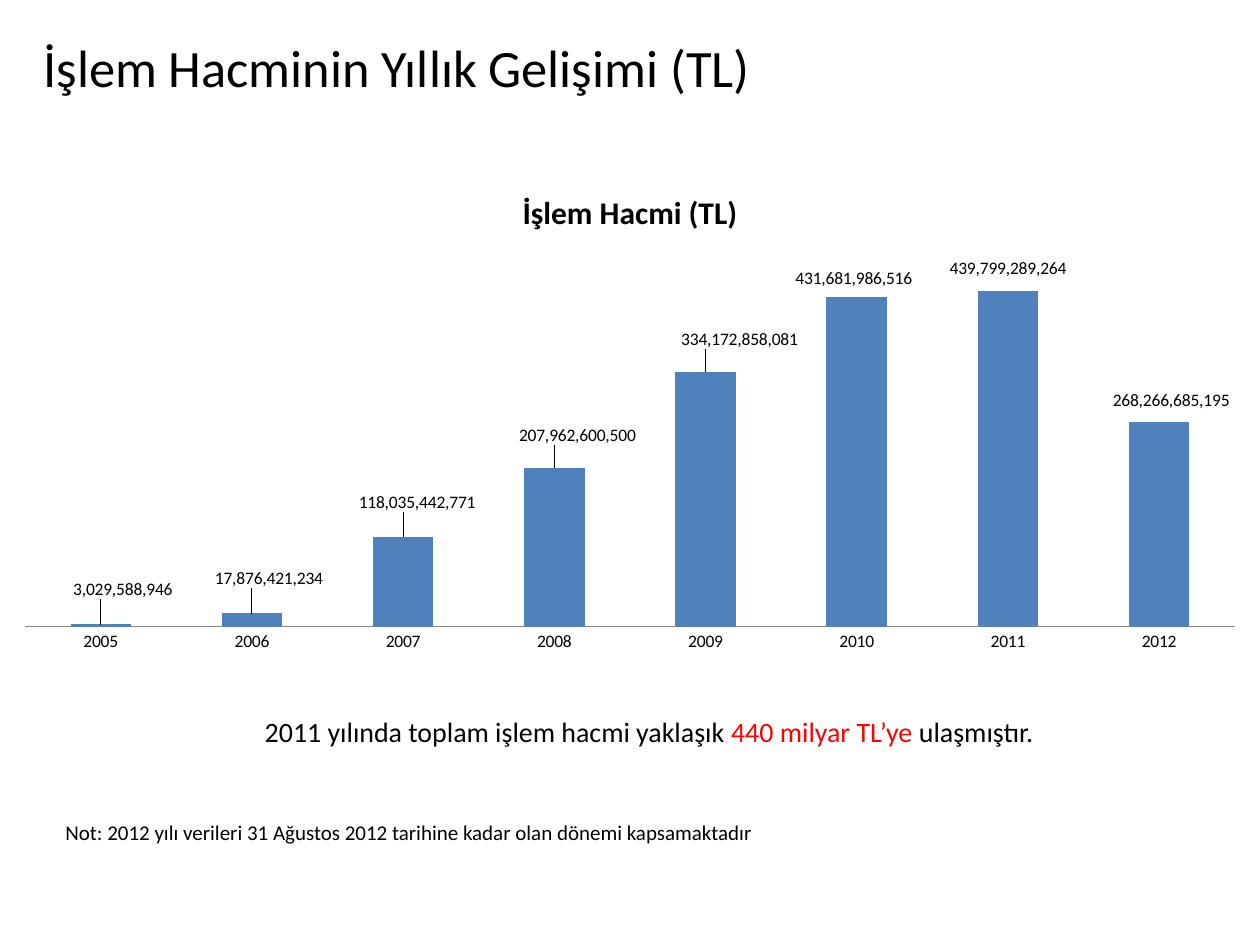
from lxml import etree
from pptx import Presentation, util as u
from pptx.chart.data import CategoryChartData
from pptx.dml.color import RGBColor
from pptx.enum import chart as ch, text
from pptx.oxml.ns import qn

BLACK = RGBColor(0, 0, 0)
RED = RGBColor(0xFF, 0, 0)
BLUE = RGBColor(0x4F, 0x81, 0xBD)
GRAY = RGBColor(0x86, 0x86, 0x86)

VOLUMES = {
    "2005": 3029588946,
    "2006": 17876421234,
    "2007": 118035442771,
    "2008": 207962600500,
    "2009": 334172858081,
    "2010": 431681986516,
    "2011": 439799289264,
    "2012": 268266685195,
}
LABEL_SHIFTS = [(22, -20), (17, -20), (14, -19), (23, -18),
                (34, -17), (-3, -4), (0, -8), (12, -7)]


class Deck:
    """Holds the font, the pixel scale and the current slide."""

    FONT = "Calibri"
    SCALE = u.Inches(1) / 126

    def __init__(self, width, height):
        self.prs = Presentation()
        self.prs.slide_width, self.prs.slide_height = self.emu(width, height)
        self.slide = self.prs.slides.add_slide(self.prs.slide_layouts[6])

    def emu(self, *lengths):
        return [u.Emu(round(n * self.SCALE)) for n in lengths]

    def style(self, font, size, color=BLACK):
        font.name, font.size = self.FONT, u.Pt(size)
        font.color.rgb = color

    def text(self, box, runs, size, align=text.PP_ALIGN.LEFT, grow=True):
        frame = self.slide.shapes.add_textbox(*self.emu(*box)).text_frame
        frame.word_wrap = True
        if grow:
            frame.auto_size = text.MSO_AUTO_SIZE.SHAPE_TO_FIT_TEXT
        paragraph = frame.paragraphs[0]
        paragraph.alignment = align
        self.style(paragraph.font, size)
        for words, color in runs:
            run = paragraph.add_run()
            run.text = words
            self.style(run.font, size, color)

    def layout(self, **values):
        layout = etree.Element(qn("c:layout"))
        manual = etree.SubElement(layout, qn("c:manualLayout"))
        for tag, value in values.items():
            etree.SubElement(manual, qn(f"c:{tag}"), val=str(value))
        return layout

    def columns(self, box, title, values, shifts, maximum):
        data = CategoryChartData(number_format="#,##0")
        data.categories = list(values)
        data.add_series(title, list(values.values()))
        chart = self.slide.shapes.add_chart(
            ch.XL_CHART_TYPE.COLUMN_CLUSTERED, *self.emu(*box), data).chart
        self.style(chart.font, 10)
        chart.has_legend = False
        heading = chart.chart_title.text_frame
        heading.text = title
        self.style(heading.paragraphs[0].font, 18)
        heading.paragraphs[0].font.bold = True

        years, amounts = chart.category_axis, chart.value_axis
        years.major_tick_mark = ch.XL_TICK_MARK.NONE
        years.format.line.color.rgb = GRAY
        amounts.visible = amounts.has_major_gridlines = False
        amounts.minimum_scale, amounts.maximum_scale = 0, maximum

        plot = chart.plots[0]
        plot.gap_width, plot.vary_by_categories = 150, False
        plot.has_data_labels = True
        plot.data_labels.show_value = True
        plot.data_labels.number_format = "#,##0"
        plot.data_labels.number_format_is_linked = False
        bars = plot.series[0]
        bars.format.fill.solid()
        bars.format.fill.fore_color.rgb = BLUE
        width, height = box[2:]
        for index, (dx, dy) in enumerate(shifts):
            bars.points[index].data_label.position = ch.XL_LABEL_POSITION.OUTSIDE_END
            label = bars.data_labels._element.findall(qn("c:dLbl"))[index]
            label.find(qn("c:idx")).addnext(
                self.layout(x=round(dx / width, 4), y=round(dy / height, 4)))

        area = chart._chartSpace.chart.plotArea
        for old in area.findall(qn("c:layout")):
            area.remove(old)
        area.insert(0, self.layout(layoutTarget="inner", xMode="edge", yMode="edge",
                                   x=0.02, y=0.156, w=0.96, h=0.773))


def main():
    deck = Deck(1260, 945)
    center = text.PP_ALIGN.CENTER
    deck.text((-59, 29, 912, 129), [("İşlem Hacminin Yıllık Gelişimi (TL)", BLACK)],
              30, center, grow=False)
    deck.text((158, 708, 982, 47),
              [("2011 yılında toplam işlem hacmi yaklaşık ", BLACK),
               ("440 milyar TL’ye ", RED), ("ulaşmıştır.", BLACK)], 16, center)
    deck.text((53, 813, 829, 38),
              [("Not: 2012 yılı verileri 31 Ağustos 2012 tarihine kadar olan "
                "dönemi kapsamaktadır", BLACK)], 12)
    deck.columns((0, 168, 1260, 494), "İşlem Hacmi (TL)", VOLUMES, LABEL_SHIFTS, 500e9)
    deck.prs.save("out.pptx")


if __name__ == "__main__":
    main()
